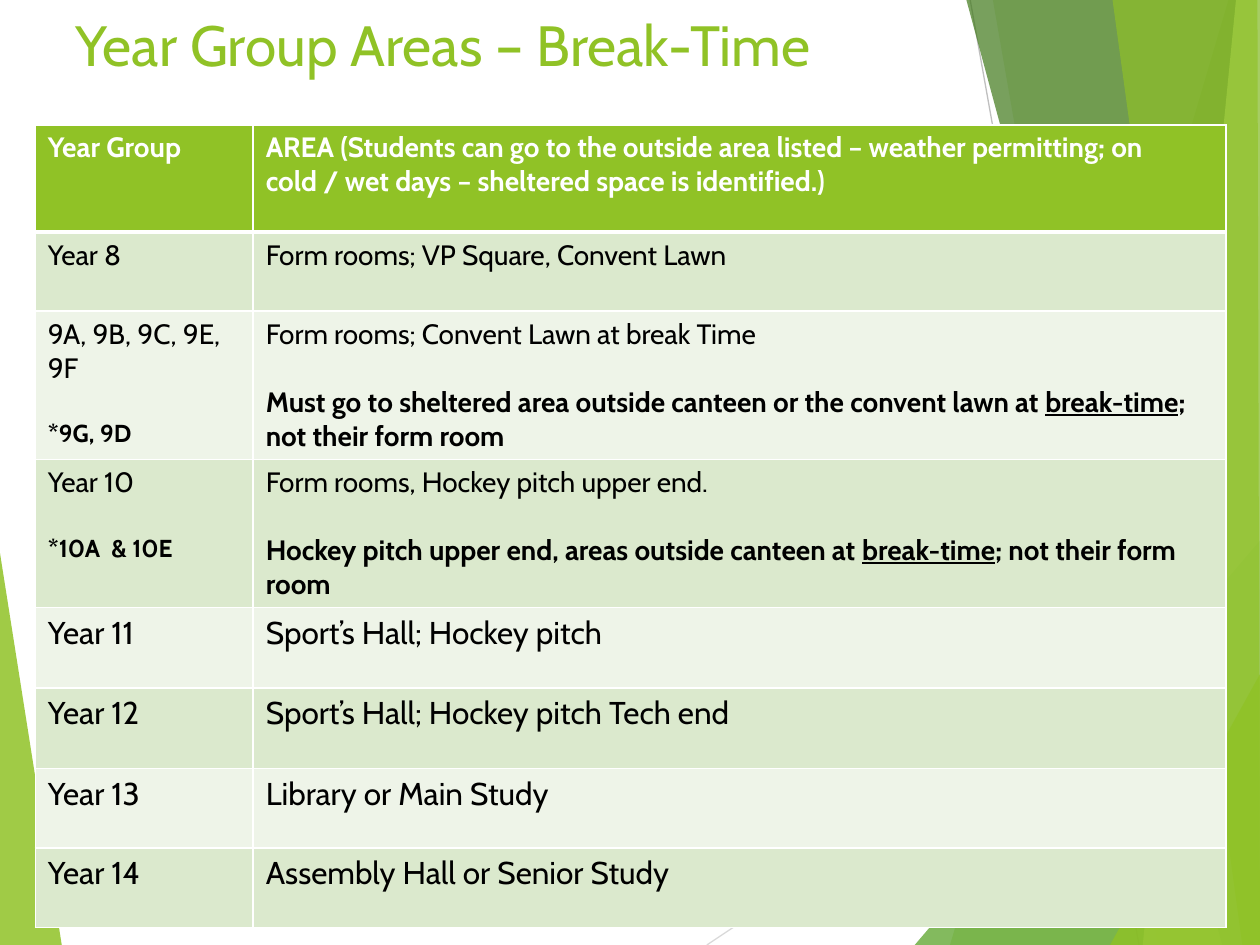
from lxml.etree import SubElement
from pptx import Presentation
from pptx.dml.color import RGBColor
from pptx.enum.shapes import MSO_CONNECTOR
from pptx.enum.text import MSO_ANCHOR, MSO_AUTO_SIZE, PP_ALIGN
from pptx.oxml.ns import qn
from pptx.util import Inches, Pt

FONT = "Cabin"
COLORS = {
    "lime": "90C226", "green": "54A021", "forest": "3F7819", "pale": "C0E474",
    "silver": "D9D9D9", "gray": "BFBFBF", "white": "FFFFFF", "black": "000000",
    "band": "DBE9CD", "light": "EEF4E8",
}
GAP = Pt(19.4)  # one line of 16 pt text

LINES = [
    ((5.61, 7.5), (10, 4.57), "silver"),
    ((7.7, 0), (9.04, 7.5), "gray"),
]
LEFT = ([(0, 4.39), (0.49, 7.5), (0, 7.5)], "lime", 85)
FACETS = [
    ([(9.75, 0), (7.54, 7.5), (10, 7.5), (10, 0)], "lime", 30),
    ([(7.88, 0), (9.19, 7.5), (10, 7.5), (10, 0)], "lime", 20),
    ([(7.26, 7.5), (10, 4.29), (10, 7.5)], "green", 72),
    ([(7.67, 0), (9.7, 7.5), (10, 7.5), (10, 0)], "forest", 70),
    ([(9.81, 0), (9.07, 7.5), (10, 7.5), (10, 0)], "pale", 70),
    ([(8.83, 0), (9.86, 7.5), (10, 7.5), (9.98, 0)], "lime", 65),
    ([(8.81, 7.5), (10, 5.35), (10, 7.5)], "lime", 80),
]

COLS = [1.73, 7.72]
# Row height, main text size, main line of each cell
ROWS = [
    (0.85, 16, "Year Group",
     "AREA (Students can go to the outside area listed – weather permitting; "
     "on cold / wet days – sheltered space is identified.)"),
    (0.63, 16, "Year 8", "Form rooms; VP Square, Convent Lawn"),
    (1.17, 16, "9A, 9B, 9C, 9E, 9F", "Form rooms; Convent Lawn at break Time"),
    (1.17, 16, "Year 10", "Form rooms, Hockey pitch upper end."),
    (0.64, 18, "Year 11", "Sport’s Hall; Hockey pitch"),
    (0.64, 18, "Year 12", "Sport’s Hall; Hockey pitch Tech end"),
    (0.63, 18, "Year 13", "Library or Main Study"),
    (0.63, 18, "Year 14", "Assembly Hall or Senior Study"),
]
# Row number: marked classes, where they must go at break
NOTES = {
    2: ("*9G, 9D", "Must go to sheltered area outside canteen or the convent lawn at "),
    3: ("*10A  & 10E", "Hockey pitch upper end, areas outside canteen at "),
}


def color(name):
    return RGBColor.from_string(COLORS[name])


def add_run(para, text, size, tint="black", bold=False, under=False):
    run = para.add_run()
    run.text = text
    font = run.font
    font.name, font.size = FONT, Pt(size)
    font.bold, font.underline = bold, under
    font.color.rgb = color(tint)


def add_line(slide, start, end, tint):
    line = slide.shapes.add_connector(
        MSO_CONNECTOR.STRAIGHT, *(Inches(v) for v in start + end))
    line.line.color.rgb = color(tint)
    line.line.width = Pt(0.75)
    SubElement(line._element.spPr, qn("a:effectLst"))


def add_facet(slide, points, tint, alpha):
    """Draw a see-through polygon; alpha is its opacity in percent."""
    pts = [(Inches(x), Inches(y)) for x, y in points]
    pen = slide.shapes.build_freeform(*pts[0])
    pen.add_line_segments(pts[1:], close=True)
    shape = pen.convert_to_shape()
    shape.shadow.inherit = False
    shape.line.fill.background()
    shape.fill.solid()
    shape.fill.fore_color.rgb = color(tint)
    clr = shape._element.spPr.find(qn("a:solidFill"))[0]
    SubElement(clr, qn("a:alpha"), val=str(alpha * 1000))


def set_title(slide, text):
    title = slide.shapes.title
    title.left, title.top = Inches(0.5), Inches(0.03)
    title.width, title.height = Inches(9), Inches(0.55)
    frame = title.text_frame
    frame.auto_size = MSO_AUTO_SIZE.NONE
    frame.vertical_anchor = MSO_ANCHOR.TOP
    para = frame.paragraphs[0]
    para.alignment = PP_ALIGN.LEFT
    add_run(para, text, 32.4, "lime")


def set_edges(cell, top, bottom):
    props = cell._tc.get_or_add_tcPr()
    for side, width in zip("LRTB", (1, 1, top, bottom)):
        edge = SubElement(props, qn(f"a:ln{side}"), w=str(Pt(width)))
        fill = SubElement(edge, qn("a:solidFill"))
        SubElement(fill, qn("a:srgbClr"), val=COLORS["white"])


def add_note(cell):
    para = cell.text_frame.add_paragraph()
    para.space_before = GAP
    return para


def add_table(slide):
    table = slide.shapes.add_table(
        len(ROWS), len(COLS), Inches(0.28), Inches(0.99),
        Inches(sum(COLS)), Inches(sum(row[0] for row in ROWS))).table
    table.horz_banding = False
    for col, width in zip(table.columns, COLS):
        col.width = Inches(width)
    for i, (height, size, *texts) in enumerate(ROWS):
        table.rows[i].height = Inches(height)
        head = i == 0
        fill = "lime" if head else "band" if i % 2 else "light"
        for cell, text in zip(table.rows[i].cells, texts):
            set_edges(cell, 3 if i == 1 else 1, 3 if head else 1)
            cell.fill.solid()
            cell.fill.fore_color.rgb = color(fill)
            add_run(cell.text_frame.paragraphs[0], text, size,
                    "white" if head else "black", bold=head)
    for i, (group, place) in NOTES.items():
        add_run(add_note(table.cell(i, 0)), group, 14, bold=True)
        para = add_note(table.cell(i, 1))
        add_run(para, place, 16, bold=True)
        add_run(para, "break-time", 16, bold=True, under=True)
        add_run(para, "; not their form room", 16, bold=True)


def main():
    prs = Presentation()
    prs.slide_width, prs.slide_height = Inches(10), Inches(7.5)
    slide = prs.slides.add_slide(prs.slide_layouts[5])
    add_facet(slide, *LEFT)
    for line in LINES:
        add_line(slide, *line)
    for facet in FACETS:
        add_facet(slide, *facet)
    set_title(slide, "Year Group Areas – Break-Time")
    add_table(slide)
    prs.save("out.pptx")


if __name__ == "__main__":
    main()
